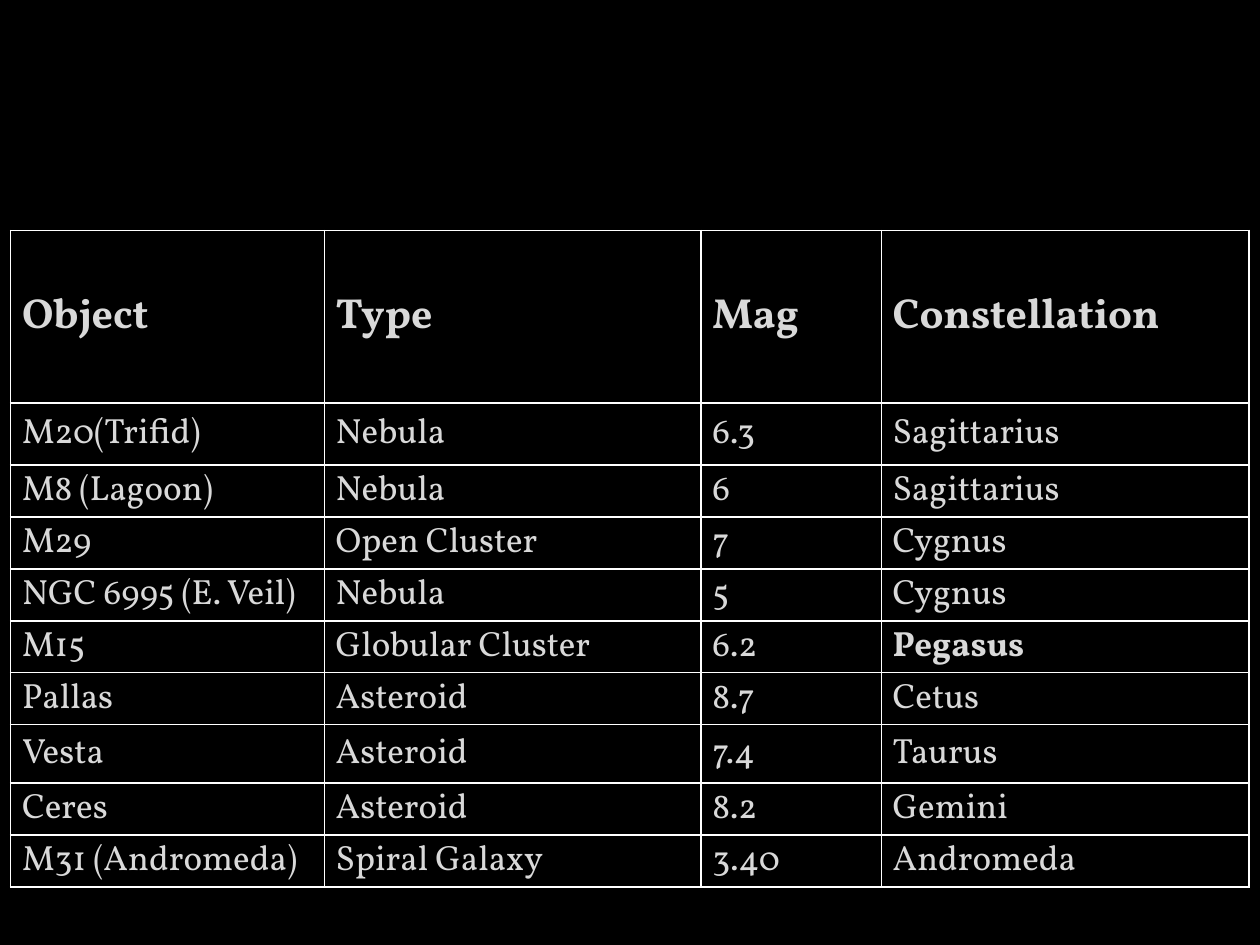
import pptx
import pptx.util
import pptx.dml.color
import pptx.enum.text
import pptx.oxml

COLOURS = {"space": "000000", "text": "D9D9D9", "grid": "FFFFFF"}
FONT = "Vollkorn"
WIDTH, HEIGHT = pptx.util.Inches(10), pptx.util.Inches(7.5)
BORDER = (
    '<a:{side} xmlns:a="http://schemas.openxmlformats.org/drawingml/2006/main" w="12700">'
    '<a:solidFill><a:srgbClr val="{colour}"/></a:solidFill></a:{side}>'
)
TARGETS = [
    ("Object", "Type", "Mag", "Constellation"),
    ("M20(Trifid)", "Nebula", "6.3", "Sagittarius"),
    ("M8 (Lagoon)", "Nebula", "6", "Sagittarius"),
    ("M29", "Open Cluster", "7", "Cygnus"),
    ("NGC 6995 (E. Veil)", "Nebula", "5", "Cygnus"),
    ("M15", "Globular Cluster", "6.2", "Pegasus"),
    ("Pallas", "Asteroid", "8.7", "Cetus"),
    ("Vesta", "Asteroid", "7.4", "Taurus"),
    ("Ceres", "Asteroid", "8.2", "Gemini"),
    ("M31 (Andromeda)", "Spiral Galaxy", "3.40", "Andromeda"),
]
COLUMN_SHARES = [2.49, 2.99, 1.43, 2.92]
ROW_SHARES = [1.36, 0.49] + [0.41] * 5 + [0.46] + [0.41] * 2
TABLE_TOP, TABLE_WIDTH, TABLE_HEIGHT = [
    pptx.util.Inches(length) for length in (1.83, 9.83, 5.21)]


def paint(fill, colour):
    fill.solid()
    fill.fore_color.rgb = pptx.dml.color.RGBColor.from_string(COLOURS[colour])


# Black slide on the blank layout
deck = pptx.Presentation()
deck.slide_width, deck.slide_height = WIDTH, HEIGHT
slide = deck.slides.add_slide(deck.slide_layouts[6])
paint(slide.background.fill, "space")

# Target table, centred, with columns and rows as shares of its size
targets = slide.shapes.add_table(
    len(TARGETS), len(COLUMN_SHARES), (WIDTH - TABLE_WIDTH) // 2,
    TABLE_TOP, TABLE_WIDTH, TABLE_HEIGHT).table
for column, share in zip(targets.columns, COLUMN_SHARES):
    column.width = int(TABLE_WIDTH * share / sum(COLUMN_SHARES))
for row, share in zip(targets.rows, ROW_SHARES):
    row.height = int(TABLE_HEIGHT * share / sum(ROW_SHARES))

# Cells: text, fill and borders
cell_format = {
    "vertical_anchor": pptx.enum.text.MSO_ANCHOR.MIDDLE,
    "margin_left": pptx.util.Inches(0.09),
    "margin_top": pptx.util.Inches(0.01),
    "margin_right": pptx.util.Inches(0.01),
    "margin_bottom": 0,
}
for row_number, entries in enumerate(TARGETS):
    is_header = row_number == 0
    for column_number, entry in enumerate(entries):
        cell = targets.cell(row_number, column_number)
        cell.text = entry
        for attribute, value in cell_format.items():
            setattr(cell, attribute, value)

        font = cell.text_frame.paragraphs[0].runs[0].font
        font_format = {
            "name": FONT,
            "size": pptx.util.Pt(24 if is_header else 20),
            "bold": is_header or entry == "Pegasus",
        }
        for attribute, value in font_format.items():
            setattr(font, attribute, value)
        font.color.rgb = pptx.dml.color.RGBColor.from_string(COLOURS["text"])

        paint(cell.fill, "space")
        properties = cell._tc.get_or_add_tcPr()
        for position, side in enumerate(("lnL", "lnR", "lnT", "lnB")):
            properties.insert(position, pptx.oxml.parse_xml(
                BORDER.format(side=side, colour=COLOURS["grid"])))

deck.save("out.pptx")
